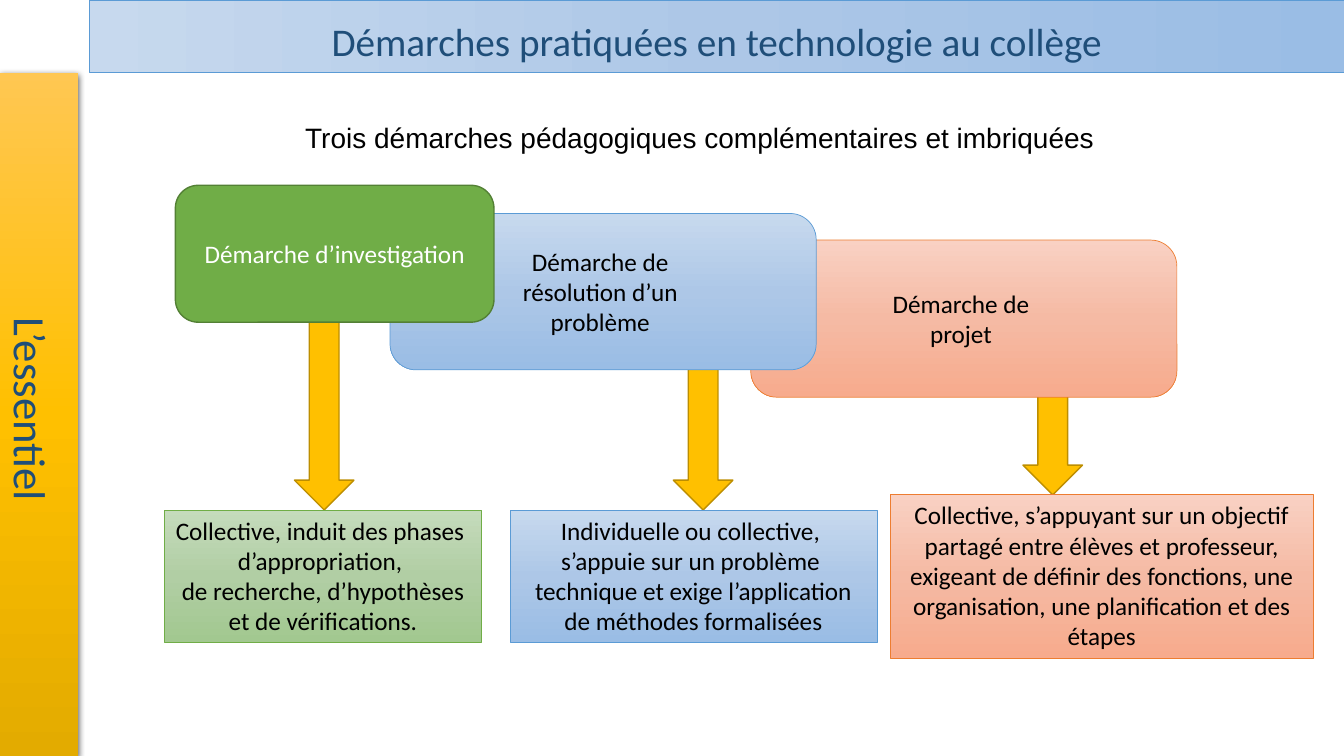
import copy

import pptx
import pptx.dml.color
import pptx.enum.shapes
import pptx.enum.text
import pptx.oxml
import pptx.oxml.ns
import pptx.util
from pptx.util import Cm

SHAPES = pptx.enum.shapes.MSO_SHAPE
ANCHOR = pptx.enum.text.MSO_ANCHOR
ALIGN = pptx.enum.text.PP_ALIGN

# Content
TITLE = "Démarches pratiquées en technologie au collège"
SIDEBAR = "L’essentiel "
SUBTITLE = "Trois démarches pédagogiques complémentaires et imbriquées"

# Positions are (left, top, width, height) in centimetres
APPROACHES = [
    {
        "name": ["Démarche d’investigation"],
        "name_at": (4.42, 4.67, 8.03, 3.45),
        "name_fill": ["green"], "name_line": ("dark green", 1), "name_color": "white",
        "note": ["Collective, induit des phases ", "d’appropriation, ",
                 "de recherche, d’hypothèses et de vérifications."],
        "note_at": (4.14, 12.85, 8, 3.33),
        "note_fill": ["green 1", "green 2", "green 3"], "note_line": ("green", 0.5),
        "arrow_at": (7.42, 7.92),
    },
    {
        "name": ["Démarche de ", "résolution d’un ", "problème "],
        "name_at": (9.83, 5.38, 10.74, 3.94),
        "name_fill": ["blue 1", "blue 2", "blue 3"], "name_line": ("blue", 0.5),
        "name_color": "black",
        "note": ["Individuelle ou collective, ", "s’appuie sur un problème ",
                 "technique et exige l’application de méthodes formalisées"],
        "note_at": (12.85, 12.85, 9.25, 3.33),
        "note_fill": ["blue 1", "blue 2", "blue 3"], "note_line": ("blue", 0.5),
        "arrow_at": (16.97, 8.97),
    },
    {
        "name": ["Démarche de ", "projet "],
        "name_at": (18.92, 6.05, 10.74, 3.96),
        "name_fill": ["orange 1", "orange 2", "orange 3"], "name_line": ("orange", 0.5),
        "name_color": "black",
        "note": ["Collective, s’appuyant sur un objectif partagé entre élèves et "
                 "professeur, exigeant de définir des fonctions, une organisation, "
                 "une planification et des étapes"],
        "note_at": (22.43, 12.47, 10.67, 4.11),
        "note_fill": ["orange 1", "orange 2", "orange 3"], "note_line": ("orange", 0.5),
        "arrow_at": (25.78, 9.55),
    },
]
ARROW_WIDTH = 1.5

COLORS = {
    "black": "000000", "white": "FFFFFF", "navy": "1F4E79",
    "green": "70AD47", "dark green": "538035",
    "green 1": "C5DBBC", "green 2": "B1CEA4", "green 3": "A2C890",
    "blue": "5B9BD5", "blue 1": "C7D9EE", "blue 2": "ADC7E7", "blue 3": "9ABDE5",
    "orange": "ED7D31", "orange 1": "F9D1C3", "orange 2": "F5BAA4", "orange 3": "F7AB8D",
    "gold": "FFC000", "dark gold": "BD8E00", "gold 1": "FFC752", "gold 3": "E3AB00",
}


def rgb(name):
    return pptx.dml.color.RGBColor.from_string(COLORS[name])


def place(shape, at):
    shape.left, shape.top, shape.width, shape.height = map(Cm, at)


def paint(shape, fill, line=None, angle=270):
    """Fill with one colour or a three-stop gradient, then set the outline."""
    if len(fill) == 1:
        shape.fill.solid()
        shape.fill.fore_color.rgb = rgb(fill[0])
    else:
        shape.fill.gradient()
        shape.fill.gradient_angle = angle
        stop_list = shape._element.spPr.find(".//" + pptx.oxml.ns.qn("a:gsLst"))
        stop_list.insert(1, copy.deepcopy(stop_list[0]))
        for stop, color, position in zip(shape.fill.gradient_stops, fill, (0, 0.5, 1)):
            stop.color.rgb = rgb(color)
            stop.position = position
    if line:
        shape.line.color.rgb = rgb(line[0])
        shape.line.width = pptx.util.Pt(line[1])
    else:
        shape.line.fill.background()


def write(shape, lines, size, color, anchor, font="Calibri", align=ALIGN.CENTER):
    frame = shape.text_frame
    frame.text = "\n".join(lines)
    frame.word_wrap = True
    frame.auto_size = pptx.enum.text.MSO_AUTO_SIZE.NONE
    frame.vertical_anchor = anchor
    for paragraph in frame.paragraphs:
        paragraph.alignment = align
        paragraph.font.name = font
        paragraph.font.size = pptx.util.Pt(size)
        paragraph.font.color.rgb = rgb(color)


def add_shape(slide, kind, at, fill, line=None):
    shape = slide.shapes.add_shape(kind, *map(Cm, at))
    shape.shadow.inherit = False
    paint(shape, fill, line)
    return shape


def add_title(slide):
    title = slide.shapes.title
    place(title, (2.25, 0, 31.62, 1.83))
    paint(title, ["blue 1", "blue 2", "blue 3"], ("blue", 0.5), angle=0)
    write(title, [TITLE], 28, "navy", ANCHOR.BOTTOM)
    title.text_frame.margin_bottom = Cm(0.2)


def add_sidebar(slide):
    sidebar = add_shape(slide, SHAPES.RECTANGLE, (0, 1.83, 1.98, 17.22),
                        ["gold 1", "gold", "gold 3"])
    write(sidebar, [SIDEBAR], 32, "navy", ANCHOR.BOTTOM)
    sidebar.text_frame._txBody.bodyPr.set("vert", "vert")
    # Soft shadow
    effects = sidebar._element.spPr.find(pptx.oxml.ns.qn("a:effectLst"))
    effects.append(pptx.oxml.parse_xml(
        f'<a:outerShdw {pptx.oxml.ns.nsdecls("a")} blurRad="57150" dist="19050" '
        f'dir="5400000" algn="ctr" rotWithShape="0"><a:srgbClr val="{COLORS["black"]}">'
        '<a:alpha val="63000"/></a:srgbClr></a:outerShdw>'))


def add_subtitle(slide):
    subtitle = slide.shapes.add_textbox(*map(Cm, (6.17, 1.83, 22.63, 2.18)))
    write(subtitle, [SUBTITLE], 20, "black", ANCHOR.BOTTOM, "Arial", ALIGN.LEFT)
    subtitle.text_frame.margin_left = Cm(1.52)


def add_approaches(slide):
    # Arrows run down to the notes, behind the overlapping name cards
    for approach in APPROACHES:
        left, top = approach["arrow_at"]
        height = approach["note_at"][1] - top
        add_shape(slide, SHAPES.DOWN_ARROW, (left, top, ARROW_WIDTH, height),
                  ["gold"], ("dark gold", 1))
    # The leftmost card lies on top
    for approach in reversed(APPROACHES):
        card = add_shape(slide, SHAPES.ROUNDED_RECTANGLE, approach["name_at"],
                         approach["name_fill"], approach["name_line"])
        write(card, approach["name"], 18, approach["name_color"], ANCHOR.MIDDLE)
    for approach in APPROACHES:
        note = add_shape(slide, SHAPES.RECTANGLE, approach["note_at"],
                         approach["note_fill"], approach["note_line"])
        write(note, approach["note"], 18, "black", ANCHOR.TOP)


def main():
    presentation = pptx.Presentation()
    presentation.slide_width, presentation.slide_height = Cm(33.87), Cm(19.05)
    slide = presentation.slides.add_slide(presentation.slide_layouts[5])
    add_title(slide)
    add_sidebar(slide)
    add_subtitle(slide)
    add_approaches(slide)
    presentation.save("out.pptx")


if __name__ == "__main__":
    main()
